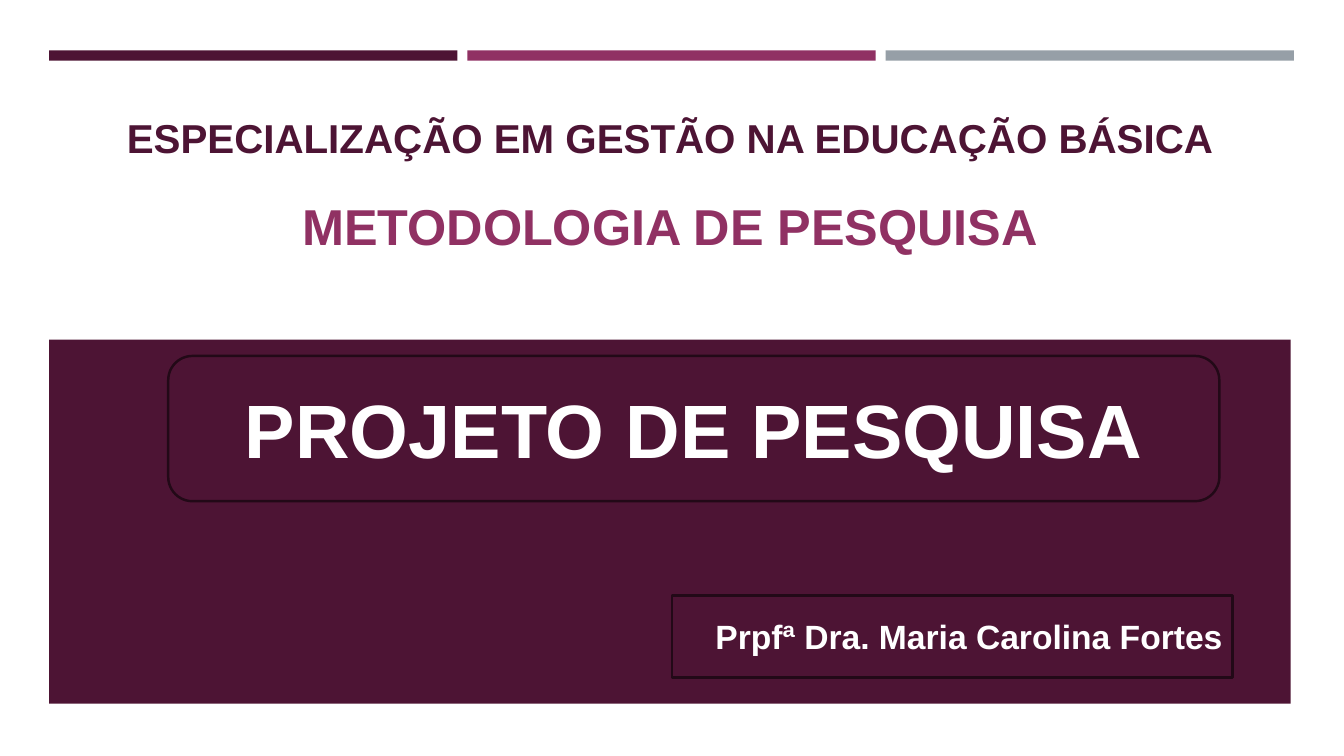
from dataclasses import dataclass

from pptx import Presentation
from pptx.dml.color import RGBColor
from pptx.enum.shapes import MSO_SHAPE
from pptx.enum.text import MSO_ANCHOR, MSO_AUTO_SIZE, PP_ALIGN
from pptx.util import Cm, Pt


@dataclass(frozen=True)
class Theme:
    font: str = "Arial"
    plum: str = "4D1434"
    magenta: str = "903163"
    grey: str = "969FA7"
    outline: str = "220917"
    white: str = "FFFFFF"
    course_size: float = 28.8
    subject_size: float = 36
    topic_size: float = 54
    teacher_size: float = 24
    outline_width: float = 1.75


THEME = Theme()


def colour(code):
    return RGBColor.from_string(code)


def write(box, text, size, code, align, anchor):
    """Put one bold paragraph into a shape and return the paragraph."""
    frame = box.text_frame
    frame.word_wrap = True
    frame.auto_size = MSO_AUTO_SIZE.NONE
    frame.vertical_anchor = anchor
    para = frame.paragraphs[0]
    para.alignment = align
    span = para.add_run()
    span.text = text
    span.font.name = THEME.font
    span.font.size = Pt(size)
    span.font.bold = True
    span.font.color.rgb = colour(code)
    return para


def add_block(page, left, top, width, height, code, kind=MSO_SHAPE.RECTANGLE):
    box = page.shapes.add_shape(kind, Cm(left), Cm(top), Cm(width), Cm(height))
    box.shadow.inherit = False
    box.fill.solid()
    box.fill.fore_color.rgb = colour(code)
    box.line.fill.background()
    return box


def add_label(page, bounds, text, size, align, kind):
    """Add an outlined plum box with white text."""
    box = add_block(page, *bounds, THEME.plum, kind)
    box.line.color.rgb = colour(THEME.outline)
    box.line.width = Pt(THEME.outline_width)
    write(box, text, size, THEME.white, align, MSO_ANCHOR.MIDDLE)


def add_top_bars(page):
    left, width, gap = 1.24, 10.29, 0.25
    for index, code in enumerate((THEME.plum, THEME.magenta, THEME.grey)):
        add_block(page, left + index * (width + gap), 1.27, width, 0.26, code)


def set_title(page, text):
    title = page.shapes.title
    title.left, title.top = Cm(1.63), Cm(2.84)
    title.width, title.height = Cm(30.53), Cm(1.35)
    write(title, text, THEME.course_size, THEME.plum,
          PP_ALIGN.CENTER, MSO_ANCHOR.BOTTOM)


def add_subtitle(page, text):
    box = page.shapes.add_textbox(Cm(1.63), Cm(4.78), Cm(30.53), Cm(1.65))
    para = write(box, text, THEME.subject_size, THEME.magenta,
                 PP_ALIGN.CENTER, MSO_ANCHOR.TOP)
    para.space_before = Pt(3.6)
    para.space_after = Pt(6)


def main():
    deck = Presentation()
    deck.slide_width, deck.slide_height = Cm(33.87), Cm(19.05)
    page = deck.slides.add_slide(deck.slide_layouts.get_by_name("Title Only"))

    add_top_bars(page)
    add_block(page, 1.24, 8.56, 31.29, 9.17, THEME.plum)
    set_title(page, "ESPECIALIZAÇÃO EM GESTÃO NA EDUCAÇÃO BÁSICA")
    add_subtitle(page, "METODOLOGIA DE PESQUISA")
    add_label(page, (4.24, 8.97, 26.49, 3.66), "PROJETO DE PESQUISA",
              THEME.topic_size, PP_ALIGN.CENTER, MSO_SHAPE.ROUNDED_RECTANGLE)
    add_label(page, (16.94, 15.01, 14.12, 2.06), "Prpfª Dra. Maria Carolina Fortes",
              THEME.teacher_size, PP_ALIGN.RIGHT, MSO_SHAPE.RECTANGLE)

    deck.save("out.pptx")


if __name__ == "__main__":
    main()
